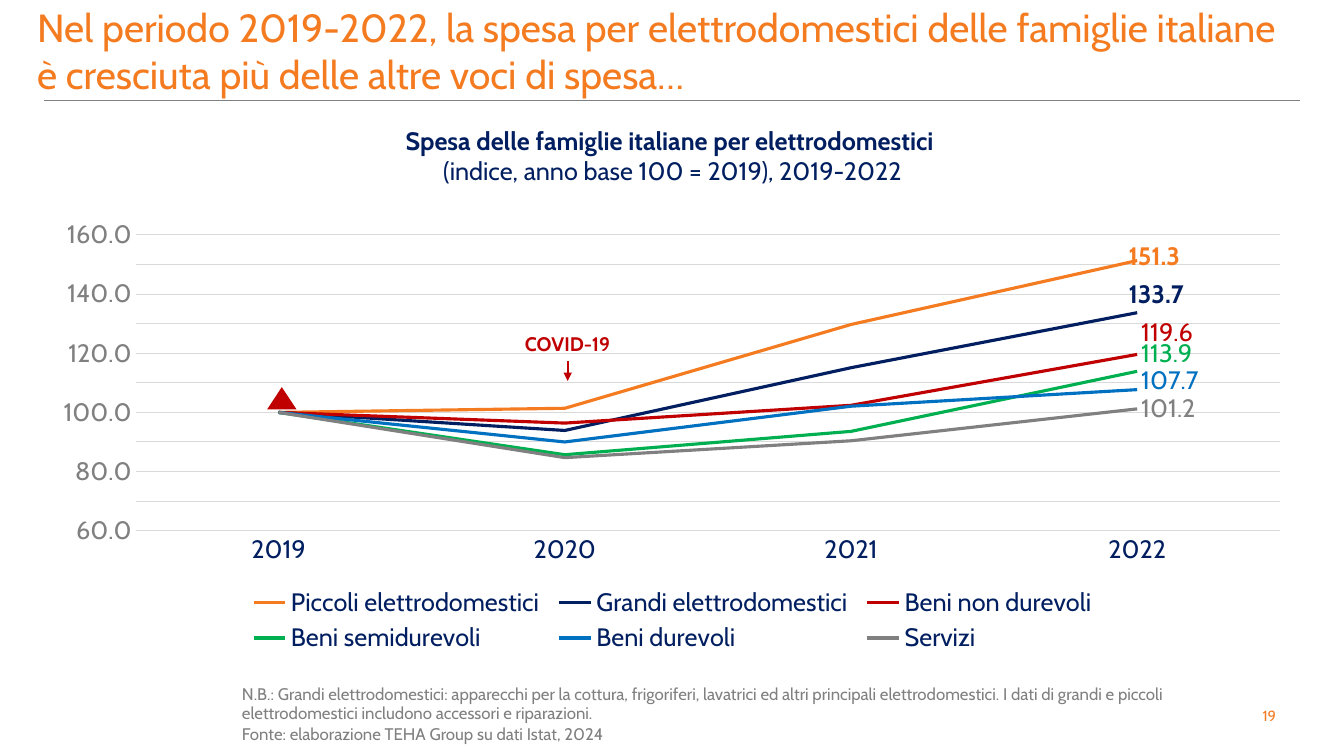
from copy import deepcopy

from lxml.etree import SubElement
from pptx import Presentation
from pptx.chart.data import CategoryChartData
from pptx.dml.color import RGBColor
from pptx.enum.chart import XL_CHART_TYPE, XL_LABEL_POSITION, XL_LEGEND_POSITION, XL_TICK_MARK
from pptx.enum.shapes import MSO_CONNECTOR, MSO_SHAPE
from pptx.enum.text import MSO_ANCHOR, PP_ALIGN
from pptx.oxml import parse_xml
from pptx.oxml.ns import nsdecls, qn
from pptx.util import Inches, Pt

ORANGE = RGBColor(0xF4, 0x7B, 0x20)
NAVY = RGBColor(0x00, 0x1E, 0x60)
RED = RGBColor(0xC0, 0x00, 0x00)
GREEN = RGBColor(0x00, 0xB0, 0x50)
BLUE = RGBColor(0x00, 0x70, 0xC0)
GRAY = RGBColor(0x80, 0x80, 0x80)
GRID = RGBColor(0xD9, 0xD9, 0xD9)
FONT = "Cabin"

deck = Presentation()
deck.slide_width, deck.slide_height = Inches(13.33), Inches(7.5)
page = deck.slides.add_slide(deck.slide_layouts[6])


def add_text(place, lines, size, color, bold=(), align=PP_ALIGN.LEFT,
             anchor=MSO_ANCHOR.TOP, inset=(0.1, 0.05), spacing=1.0):
    box = page.shapes.add_textbox(*map(Inches, place))
    frame = box.text_frame
    across, down = map(Inches, inset)
    settings = {"word_wrap": True, "vertical_anchor": anchor, "margin_left": across,
                "margin_right": across, "margin_top": down, "margin_bottom": down}
    for name, value in settings.items():
        setattr(frame, name, value)
    for index, line in enumerate(lines):
        para = frame.add_paragraph() if index else frame.paragraphs[0]
        para.text = line
        para.alignment, para.line_spacing = align, spacing
        style_font(para.font, size, color, index in bold)
    return box


def style_font(font, size, color, bold=False):
    for name, value in {"name": FONT, "size": Pt(size), "bold": bold}.items():
        setattr(font, name, value)
    font.color.rgb = color


# Title and the rule below it
add_text((0.27, 0, 13.06, 0.99),
         ["Nel periodo 2019-2022, la spesa per elettrodomestici delle famiglie italiane"
          "\vè cresciuta più delle altre voci di spesa…"],
         28, ORANGE, anchor=MSO_ANCHOR.MIDDLE)
rule = page.shapes.add_connector(MSO_CONNECTOR.STRAIGHT, Inches(0.44), Inches(1), Inches(12.89), Inches(1))
rule.line.color.rgb, rule.line.width = GRAY, Pt(0.75)

# Chart heading
add_text((0.39, 1.19, 12.56, 0.71),
         ["Spesa delle famiglie italiane per elettrodomestici ",
          "(indice, anno base 100 = 2019), 2019-2022"],
         18, NAVY, bold=(0,), align=PP_ALIGN.CENTER, anchor=MSO_ANCHOR.MIDDLE)

# Spending index: name, values, colour, bold label, label shift (share of chart size)
SPENDING = [
    ("Piccoli elettrodomestici", (100, 101.4, 129.7, 151.3), ORANGE, True, (-0.01, -0.01)),
    ("Grandi elettrodomestici", (100, 93.9, 115.1, 133.7), NAVY, True, (-0.01, -0.04)),
    ("Beni non durevoli", (100, 96.4, 102.4, 119.6), RED, False, (0, -0.05)),
    ("Beni semidurevoli", (100, 85.7, 93.6, 113.9), GREEN, False, (0, -0.04)),
    ("Beni durevoli", (100, 90.0, 102.1, 107.7), BLUE, False, (0, -0.02)),
    ("Servizi", (100, 84.7, 90.4, 101.2), GRAY, False, (0, 0)),
]
data = CategoryChartData(number_format="0.0")
data.categories = ["2019", "2020", "2021", "2022"]
for name, values, *_ in SPENDING:
    data.add_series(name, values)
chart = page.shapes.add_chart(XL_CHART_TYPE.LINE, Inches(0.39), Inches(2.1),
                              Inches(12.56), Inches(4.43), data).chart
chart.has_title = False
style_font(chart.font, 18, NAVY)
chart.plots[0].vary_by_categories = False

# Lines and end labels
for series, (_, _, color, bold, (shift_x, shift_y)) in zip(chart.plots[0].series, SPENDING):
    series.smooth = False
    series.format.line.color.rgb, series.format.line.width = color, Pt(2.25)
    label = series.points[3].data_label
    label.position = XL_LABEL_POSITION.RIGHT
    style_font(label.font, 18, color, bold)
    label_index = series._element.find(".//" + qn("c:dLbl")).find(qn("c:idx"))
    label_index.addnext(parse_xml(
        f'<c:layout {nsdecls("c")}><c:manualLayout><c:x val="{shift_x}"/>'
        f'<c:y val="{shift_y}"/></c:manualLayout></c:layout>'))

# Axes
years, index_axis = chart.category_axis, chart.value_axis
for axis, color in ((years, NAVY), (index_axis, GRAY)):
    axis.major_tick_mark = axis.minor_tick_mark = XL_TICK_MARK.NONE
    style_font(axis.tick_labels.font, 18, color)
years.format.line.color.rgb = GRID
index_axis.format.line.fill.background()
scale = {"minimum_scale": 60, "maximum_scale": 160, "major_unit": 20, "minor_unit": 10,
         "has_major_gridlines": True, "has_minor_gridlines": True}
for name, value in scale.items():
    setattr(index_axis, name, value)
grid_line = index_axis.major_gridlines.format.line
grid_line.color.rgb, grid_line.width = GRID, Pt(0.75)
major, minor = (index_axis._element.find(qn(tag)) for tag in ("c:majorGridlines", "c:minorGridlines"))
minor.append(deepcopy(major.find(qn("c:spPr"))))
index_axis.tick_labels.number_format = "0.0"
index_axis.tick_labels.number_format_is_linked = False

# Legend, then fixed places for plot and legend
chart.has_legend = True
chart.legend.position = XL_LEGEND_POSITION.BOTTOM
chart.legend.include_in_layout = False
style_font(chart.legend.font, 18, NAVY)
plot_area = chart._chartSpace.chart.plotArea
legend = chart.legend._element
for part, slot, target, area in (
        (plot_area, 0, '<c:layoutTarget val="inner"/>', (0.076, 0.052, 0.904, 0.663)),
        (legend, 1, "", (0.16, 0.83, 0.68, 0.17))):
    for old in part.findall(qn("c:layout")):
        part.remove(old)
    sizes = "".join(f'<c:{key} val="{value}"/>' for key, value in zip("xywh", area))
    part.insert(slot, parse_xml(
        f'<c:layout {nsdecls("c")}><c:manualLayout>{target}<c:xMode val="edge"/>'
        f'<c:yMode val="edge"/>{sizes}</c:manualLayout></c:layout>'))

# COVID-19 marker
covid = add_text((4.93, 3.24, 1.4, 0.34), ["COVID-19"], 14, RED, bold=(0,), align=PP_ALIGN.CENTER)
arrow = page.shapes.add_connector(MSO_CONNECTOR.STRAIGHT, Inches(5.63), Inches(3.58), Inches(5.63), Inches(3.78))
arrow.begin_connect(covid, 2)
arrow.line.color.rgb, arrow.line.width = RED, Pt(1.5)
SubElement(arrow.line._get_or_add_ln(), qn("a:tailEnd"), type="triangle")
for connector in (rule, arrow):
    SubElement(connector._element.spPr, qn("a:effectLst"))

# Base year triangle
base_year = page.shapes.add_shape(MSO_SHAPE.ISOSCELES_TRIANGLE, Inches(2.65), Inches(3.84), Inches(0.29), Inches(0.22))
base_year.shadow.inherit = False
base_year.fill.solid()
base_year.fill.fore_color.rgb = RED
base_year.line.fill.background()

# Notes, source and page number
add_text((2.29, 6.75, 9.78, 0.48),
         ["N.B.: Grandi elettrodomestici: apparecchi per la cottura, frigoriferi, lavatrici ed altri "
          "principali elettrodomestici. I dati di grandi e piccoli elettrodomestici includono "
          "accessori e riparazioni."],
         12, GRAY, inset=(0.11, 0.06), spacing=0.9)
add_text((2.29, 7.12, 7.98, 0.33), ["Fonte: elaborazione TEHA Group su dati Istat, 2024"],
         12, GRAY, inset=(0.11, 0.06))
add_text((12.36, 6.96, 0.46, 0.29), ["19"], 10.5, ORANGE, align=PP_ALIGN.CENTER)

deck.save("out.pptx")
